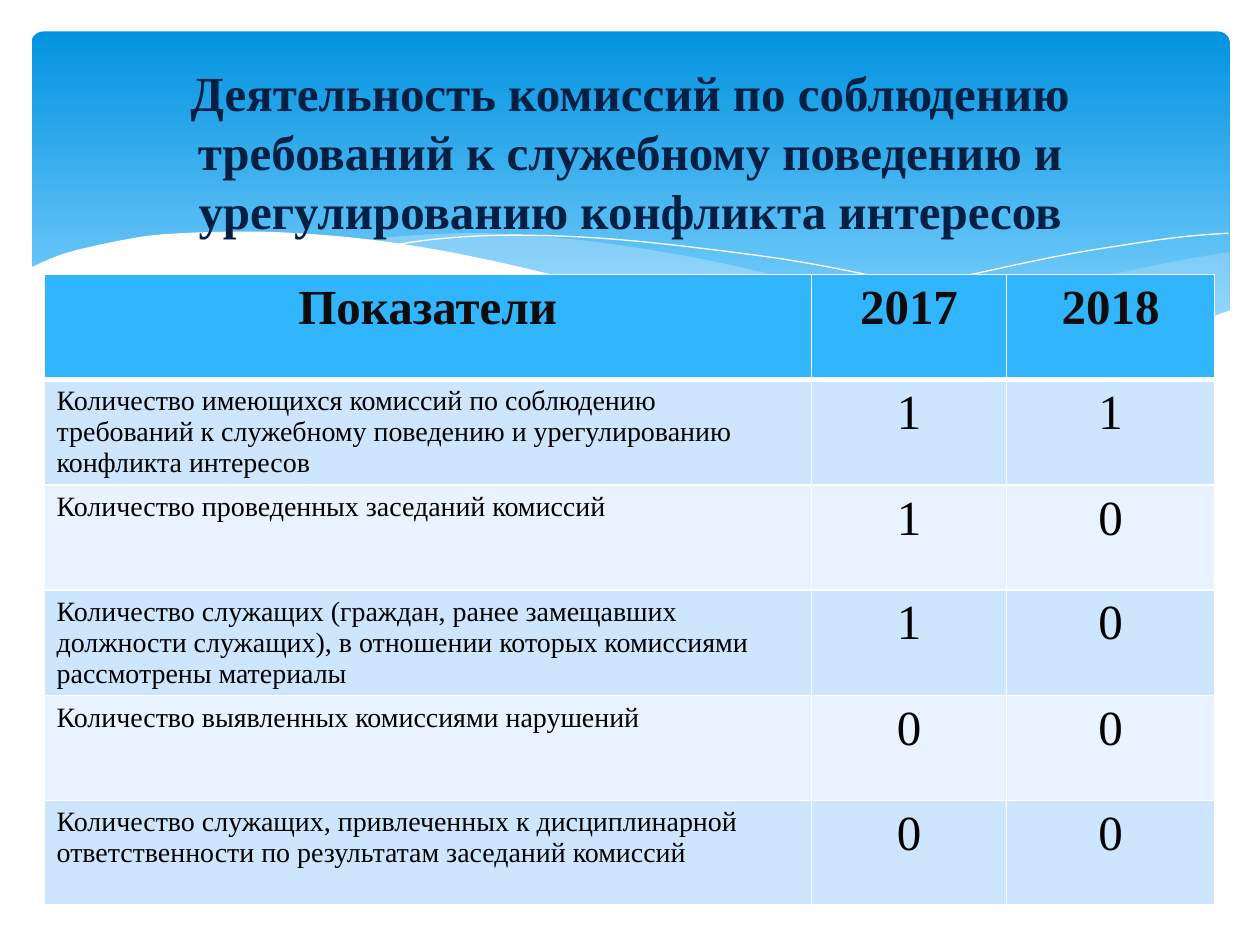
from itertools import product
from lxml.etree import SubElement
from pptx import Presentation
from pptx.dml.color import RGBColor
from pptx.enum.shapes import MSO_SHAPE
from pptx.enum.text import MSO_ANCHOR, PP_ALIGN
from pptx.oxml.ns import qn
from pptx.util import Inches, Pt

COLORS = {
    "sky": "0293E0", "horizon": "83D3FE", "mist": "C6E7FC", "white": "FFFFFF",
    "title": "041F44", "header": "31B6FD", "header_text": "0D0D0D",
    "odd": "CEE5FE", "even": "E8F3FF", "text": "000000",
}
TITLE = ("Деятельность комиссий по соблюдению требований к служебному "
         "поведению и урегулированию конфликта интересов")
INDICATORS = [
    ("Показатели", "2017", "2018"),
    ("Количество имеющихся комиссий по соблюдению требований к служебному "
     "поведению и урегулированию конфликта интересов", "1", "1"),
    ("Количество проведенных заседаний комиссий", "1", "0"),
    ("Количество служащих (граждан, ранее замещавших должности служащих), "
     "в отношении которых комиссиями рассмотрены материалы", "1", "0"),
    ("Количество выявленных комиссиями нарушений", "0", "0"),
    ("Количество служащих, привлеченных к дисциплинарной ответственности "
     "по результатам заседаний комиссий", "0", "0"),
]
RIGHT_MIST = (
    [(97.6, 20), (93.5, 20.7), (89.1, 21.6), (86.1, 22.3), (80.5, 23.7), (75.3, 24.8), (66.1, 26.5)],
    [(66.1, 26.5), (71.9, 27.2), (76.9, 27.7), (81.4, 27.8), (86.3, 27.5), (90.5, 26.9), (94.2, 25.9), (97.6, 24.7)],
)
CENTRE_MIST = (
    [(89.3, 27.3), (83.7, 26.5), (77.5, 25.4), (70.6, 24), (62.9, 22.2), (56.9, 20.8), (51.4, 19.8),
     (46.5, 19.1), (42, 18.7), (38, 18.5), (34.4, 18.6), (31.3, 18.8), (28.6, 19.1)],
    [(28.6, 19.1), (34.2, 19.9), (40.4, 21.1), (44.9, 22.2), (53, 24), (60.1, 25.5), (66.5, 26.6),
     (72.2, 27.4), (77.3, 27.7), (81.8, 27.8), (85.7, 27.7), (89.3, 27.3)],
)
LONG_CREST = [(30.9, 19.5), (34.4, 19), (38.7, 18.7), (43.3, 18.7), (48.9, 19), (55.6, 19.7),
              (63.6, 20.8), (72.7, 22.6), (79.5, 24.1), (90.7, 27.2)]
RIGHT_CREST = [(61.3, 25.7), (67.2, 24.1), (74.8, 22.3), (83.6, 20.4), (89.5, 19.4), (93.8, 18.8), (97.5, 18.5)]
WHITE_WAVE = (
    [(97.7, 24.6), (94, 25.9), (89.9, 26.9), (85, 27.5), (80.9, 27.7), (76.1, 27.5), (70.8, 27),
     (64.8, 26.2), (57.9, 25), (50.3, 23.3), (44.7, 22), (39.1, 20.7), (34, 19.7), (29.2, 19),
     (25, 18.6), (21.1, 18.4), (17.7, 18.4), (14.6, 18.5), (11.9, 18.7), (9.5, 19.1), (6.7, 19.7),
     (4.6, 20.3), (2.3, 21.3)],
    [(2.3, 32.9), (97.7, 32.9)],
)


def smooth(knots, steps=5):
    """Return points along a Catmull-Rom curve through the knots."""
    padded = [knots[0], *knots, knots[-1]]
    points = [knots[0]]
    for a, b, c, d in zip(padded, padded[1:], padded[2:], padded[3:]):
        for step in range(1, steps + 1):
            t = step / steps
            points.append(tuple(
                q + t / 2 * (r - p + t * (2 * p - 5 * q + 4 * r - s + t * (3 * q - p - 3 * r + s)))
                for p, q, r, s in zip(a, b, c, d)))
    return points


class SlideBuilder:
    """Draw styled elements on a grid of 100 columns by 75 rows."""

    font_name = "Times New Roman"
    large, small = Pt(28), Pt(16)

    def __init__(self, deck):
        deck.slide_width, deck.slide_height = Inches(10), Inches(7.5)
        self.unit = deck.slide_width / 100
        self.slide = deck.slides.add_slide(deck.slide_layouts[6])

    def grid(self, *lengths):
        return [round(length * self.unit) for length in lengths]

    def color(self, name):
        return RGBColor.from_string(COLORS[name])

    def put_text(self, frame, wording, size, color, bold=False, align=PP_ALIGN.CENTER):
        frame.text = wording
        paragraph = frame.paragraphs[0]
        paragraph.alignment = align
        font = paragraph.font
        font.name, font.size, font.bold = self.font_name, size, bold
        font.color.rgb = self.color(color)

    def sky(self, *box):
        panel = self.slide.shapes.add_shape(MSO_SHAPE.ROUNDED_RECTANGLE, *self.grid(*box))
        panel.adjustments[0] = 0.034
        panel.shadow.inherit = False
        panel.line.fill.background()
        panel.fill.gradient()
        panel.fill.gradient_angle = 270
        for stop, name, position in zip(panel.fill.gradient_stops, ("sky", "horizon"), (0, 0.9)):
            stop.color.rgb = self.color(name)
            stop.position = position

    def outline(self, points, closed):
        start, *others = [self.grid(*point) for point in points]
        builder = self.slide.shapes.build_freeform(*start)
        builder.add_line_segments(others, close=closed)
        curve = builder.convert_to_shape()
        curve.shadow.inherit = False
        return curve

    def wave(self, edges, color, opacity=100):
        points = [point for edge in edges for point in smooth(edge)]
        water = self.outline(points, True)
        water.line.fill.background()
        water.fill.solid()
        water.fill.fore_color.rgb = self.color(color)
        if opacity < 100:
            tint = water.fill._xPr.find(".//" + qn("a:srgbClr"))
            SubElement(tint, qn("a:alpha"), val=str(opacity * 1000))

    def crest(self, knots):
        ridge = self.outline(smooth(knots), False)
        ridge.fill.background()
        ridge.line.color.rgb = self.color("white")
        ridge.line.width = Pt(0)

    def border(self, cell, side, width):
        edge = SubElement(cell._tc.get_or_add_tcPr(), qn("a:ln" + side), w=str(Pt(width)))
        SubElement(SubElement(edge, qn("a:solidFill")), qn("a:srgbClr"), val=COLORS["white"])

    def table(self, records, left, top, widths, row_height):
        box = self.grid(left, top, sum(widths), row_height * len(records))
        table = self.slide.shapes.add_table(len(records), len(widths), *box).table
        for column, width in zip(table.columns, self.grid(*widths)):
            column.width = width
        for row, column in product(range(len(records)), range(len(widths))):
            cell = table.cell(row, column)
            for side in "LRTB":
                self.border(cell, side, 3 if (row, side) in ((0, "B"), (1, "T")) else 1)
            cell.fill.solid()
            band = "header" if row == 0 else "odd" if row % 2 else "even"
            cell.fill.fore_color.rgb = self.color(band)
            label = row > 0 and column == 0
            self.put_text(cell.text_frame, records[row][column],
                          self.small if label else self.large,
                          "text" if row else "header_text", bold=row == 0,
                          align=PP_ALIGN.LEFT if label else PP_ALIGN.CENTER)

    def title(self, wording, *box):
        frame = self.slide.shapes.add_textbox(*self.grid(*box)).text_frame
        frame.word_wrap = True
        frame.vertical_anchor = MSO_ANCHOR.MIDDLE
        self.put_text(frame, wording, self.large, "title", bold=True)


def main():
    """Build the slide and save it."""
    deck = Presentation()
    page = SlideBuilder(deck)
    page.sky(2.5, 2.5, 95.1, 27)
    page.wave(RIGHT_MIST, "mist", 29)
    page.wave(CENTRE_MIST, "mist", 40)
    page.crest(LONG_CREST)
    page.crest(RIGHT_CREST)
    page.wave(WHITE_WAVE, "white")
    page.table(INDICATORS, 3.5, 21.8, (60.9, 15.5, 16.5), 8.3)
    page.title(TITLE, 5, 3.7, 90, 16.5)
    deck.save("out.pptx")


if __name__ == "__main__":
    main()
